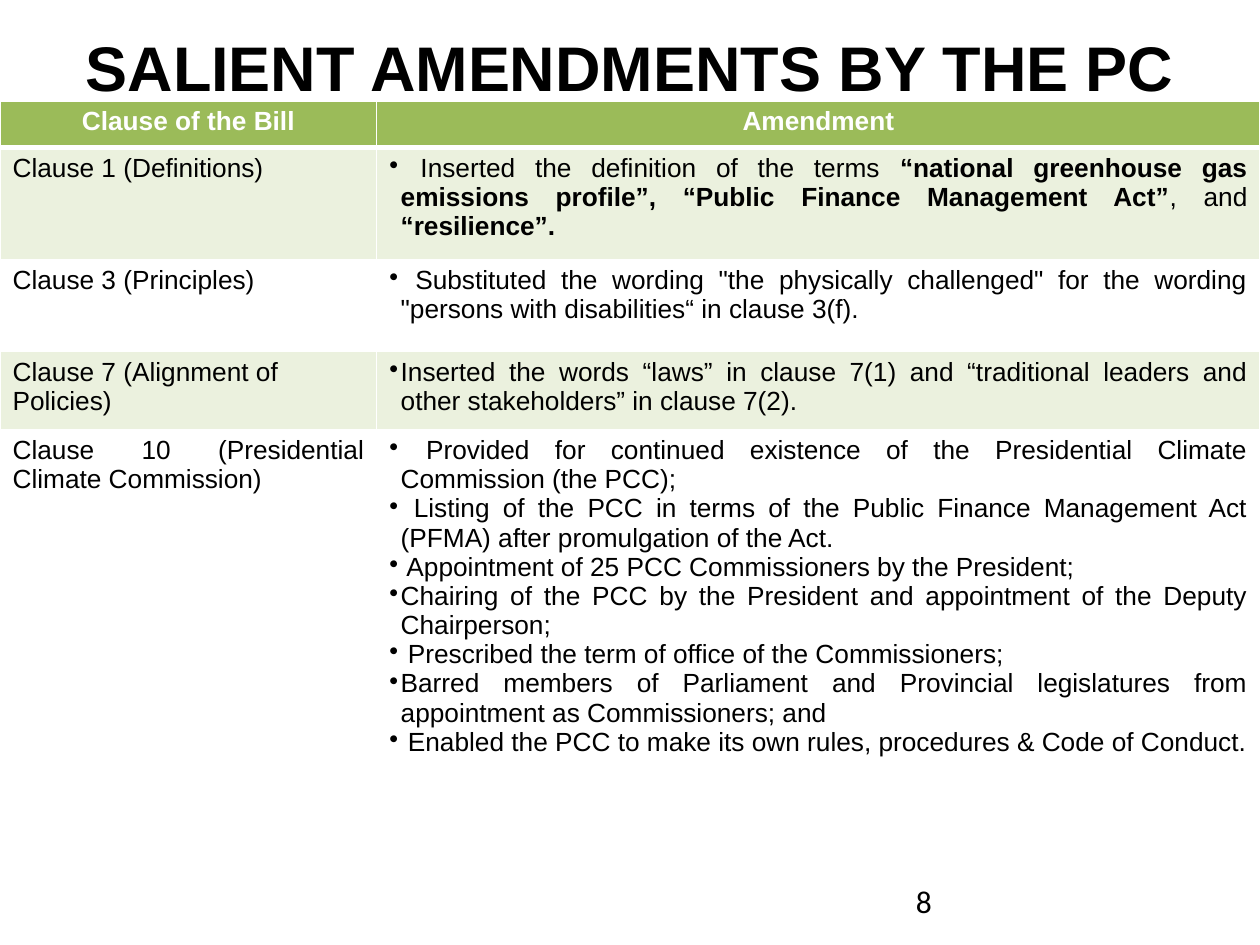
from lxml.etree import SubElement
from pptx import Presentation
from pptx.dml.color import RGBColor
from pptx.enum.text import MSO_ANCHOR as Anchor, PP_ALIGN as Align
from pptx.oxml.ns import qn
from pptx.util import Inches, Pt

BLACK = RGBColor(0x00, 0x00, 0x00)
WHITE = RGBColor(0xFF, 0xFF, 0xFF)
GREEN = RGBColor(0x9B, 0xBB, 0x59)
PALE_GREEN = RGBColor(0xEB, 0xF1, 0xDE)

HEADINGS = ["Clause of the Bill", "Amendment"]
COLUMN_WIDTHS = [2.99, 7.01]
ROW_HEIGHTS = [0.37, 0.89, 0.73, 0.62, 3.26]
CLAUSES = [
    ("Clause 1 (Definitions)", Align.LEFT, [
        [" Inserted the definition of the terms ",
         "“national greenhouse gas emissions profile”, “Public Finance Management Act”",
         ", and ", "“resilience”."]]),
    ("Clause 3 (Principles)", Align.LEFT, [
        [' Substituted the wording "the physically challenged" for the wording '
         '"persons with disabilities“ in clause 3(f).']]),
    ("Clause 7 (Alignment of Policies)", Align.LEFT, [
        ["Inserted the words “laws” in clause 7(1) and “traditional leaders and "
         "other stakeholders” in clause 7(2)."]]),
    ("Clause 10 (Presidential Climate Commission)", Align.JUSTIFY, [
        [" Provided for continued existence of the Presidential Climate Commission (the PCC);"],
        [" Listing of the PCC in terms of the Public Finance Management Act (PFMA) "
         "after promulgation of the Act."],
        [" Appointment of 25 PCC Commissioners by the President;"],
        ["Chairing of the PCC by the President and appointment of the Deputy Chairperson;"],
        [" Prescribed the term of office of the Commissioners;"],
        ["Barred members of Parliament and Provincial legislatures from "
         "appointment as Commissioners; and"],
        [" Enabled the PCC to make its own rules, procedures & Code of Conduct."]]),
]


def write(paragraph, text, size=15, font="Arial", color=BLACK, bold=False, align=Align.LEFT):
    """Add one formatted run to a paragraph."""
    paragraph.alignment = align
    run = paragraph.add_run()
    run.text = text
    run.font.size = Pt(size)
    run.font.name = font
    run.font.bold = bold
    run.font.color.rgb = color


def add_text(slide, left, top, width, height, text, anchor=Anchor.TOP, **style):
    """Place a wrapped text box holding one paragraph."""
    frame = slide.shapes.add_textbox(
        Inches(left), Inches(top), Inches(width), Inches(height)).text_frame
    frame.word_wrap = True
    frame.vertical_anchor = anchor
    write(frame.paragraphs[0], text, **style)


def add_bullet(paragraph):
    """Give a paragraph a hanging round bullet."""
    props = paragraph._p.get_or_add_pPr()
    props.set("marL", str(Inches(0.09)))
    props.set("indent", str(Inches(-0.09)))
    SubElement(props, qn("a:buChar")).set("char", "•")


def style_cell(cell, fill, top=1, bottom=1):
    """Fill a cell and draw its white borders."""
    props = cell._tc.get_or_add_tcPr()
    for side, width in (("L", 1), ("R", 1), ("T", top), ("B", bottom)):
        line = SubElement(props, qn(f"a:ln{side}"), w=str(Pt(width)))
        solid = SubElement(line, qn("a:solidFill"))
        SubElement(solid, qn("a:srgbClr")).set("val", str(WHITE))
    cell.fill.solid()
    cell.fill.fore_color.rgb = fill


def write_amendments(frame, amendments):
    """List amendments as bullets, with every second part in bold."""
    for index, parts in enumerate(amendments):
        paragraph = frame.add_paragraph() if index else frame.paragraphs[0]
        add_bullet(paragraph)
        for position, part in enumerate(parts):
            write(paragraph, part, bold=position % 2 == 1, align=Align.JUSTIFY)


def add_clause_table(slide):
    """Build the table of clauses and their amendments."""
    table = slide.shapes.add_table(
        len(ROW_HEIGHTS), len(COLUMN_WIDTHS), Inches(0), Inches(0.8),
        Inches(sum(COLUMN_WIDTHS)), Inches(sum(ROW_HEIGHTS))).table
    for column, width in zip(table.columns, COLUMN_WIDTHS):
        column.width = Inches(width)
    for row, height in zip(table.rows, ROW_HEIGHTS):
        row.height = Inches(height)
    for column, heading in enumerate(HEADINGS):
        cell = table.cell(0, column)
        style_cell(cell, GREEN, bottom=3)
        write(cell.text_frame.paragraphs[0], heading, color=WHITE, bold=True, align=Align.CENTER)
    for row, (clause, align, amendments) in enumerate(CLAUSES, 1):
        clause_cell, amendment_cell = table.cell(row, 0), table.cell(row, 1)
        for cell in (clause_cell, amendment_cell):
            style_cell(cell, PALE_GREEN if row % 2 else WHITE, top=3 if row == 1 else 1)
        write(clause_cell.text_frame.paragraphs[0], clause, align=align)
        write_amendments(amendment_cell.text_frame, amendments)


def main():
    """Build and save the slide."""
    deck = Presentation()
    deck.slide_width, deck.slide_height = Inches(10), Inches(7.5)
    slide = deck.slides.add_slide(deck.slide_layouts[6])
    add_text(slide, 0, 0.17, 10, 0.71, "SALIENT AMENDMENTS BY THE PC",
             anchor=Anchor.MIDDLE, size=36, bold=True, align=Align.CENTER)
    add_text(slide, 7.17, 6.95, 2.33, 0.4, "8", size=18, font="Calibri")
    add_clause_table(slide)
    deck.save("out.pptx")


if __name__ == "__main__":
    main()
